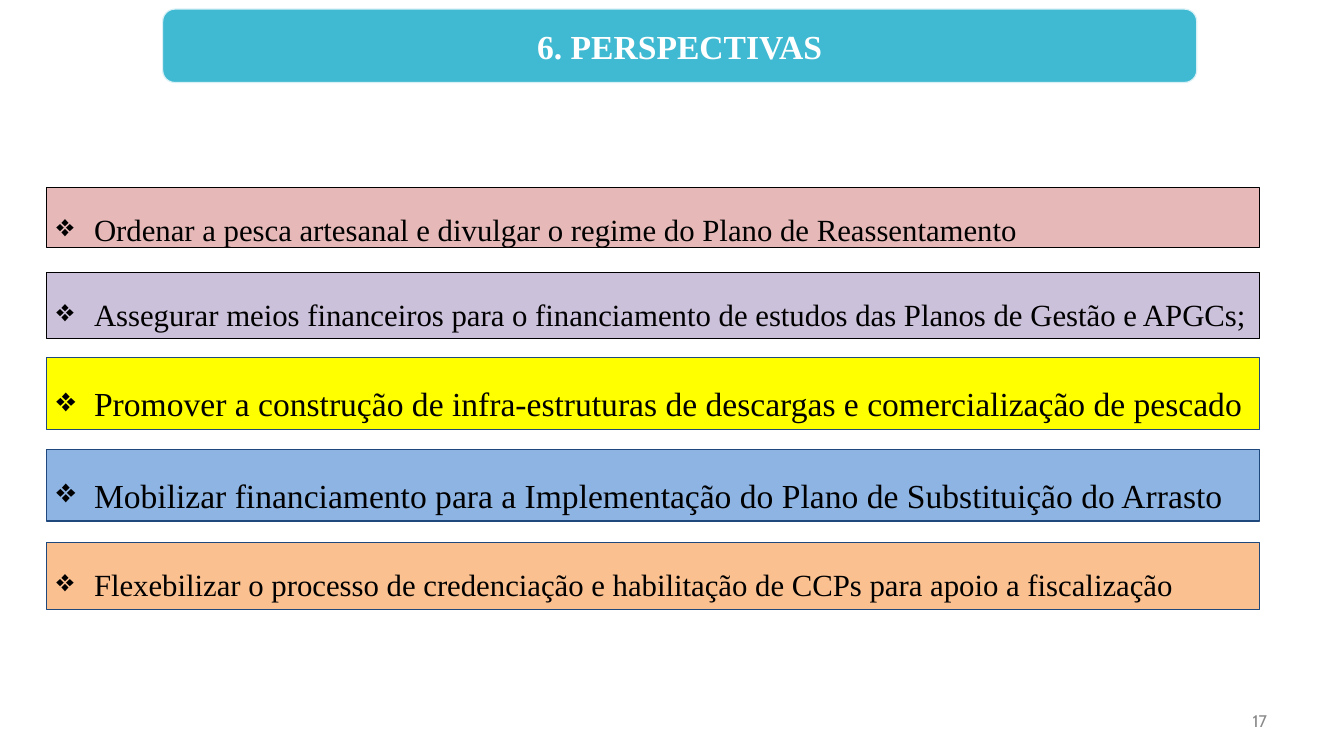
from lxml import etree
from pptx import Presentation
from pptx.dml.color import RGBColor
from pptx.enum.shapes import MSO_SHAPE
from pptx.enum.text import MSO_ANCHOR, PP_ALIGN
from pptx.oxml.ns import qn
from pptx.util import Cm, Pt

RECTANGLE, ROUNDED = MSO_SHAPE.RECTANGLE, MSO_SHAPE.ROUNDED_RECTANGLE
TOP, MIDDLE = MSO_ANCHOR.TOP, MSO_ANCHOR.MIDDLE
LEFT, CENTER, RIGHT, JUSTIFY = PP_ALIGN.LEFT, PP_ALIGN.CENTER, PP_ALIGN.RIGHT, PP_ALIGN.JUSTIFY

SERIF = "Times New Roman"
BLACK, NAVY, WHITE, GREY = "000000", "1F497D", "FFFFFF", "898989"
TITLE = "6. PERSPECTIVAS"
PAGE_NUMBER = "17"
BAR_LEFT, BAR_WIDTH = 1.17, 30.58
BULLET, BULLET_INDENT = "❖", 0.95

# text, top (cm), height (cm), fill, outline, text size, alignment
PERSPECTIVES = [
    ("Ordenar a pesca artesanal e divulgar o regime do Plano de Reassentamento",
     4.72, 1.52, "E6B9B8", BLACK, 22, JUSTIFY),
    ("Assegurar meios financeiros para o financiamento de estudos das Planos de Gestão e APGCs;",
     6.86, 1.68, "CCC1DA", BLACK, 22, JUSTIFY),
    ("Promover a construção de infra-estruturas de descargas e comercialização de pescado",
     9.02, 1.8, "FFFF00", NAVY, 24, LEFT),
    ("Mobilizar financiamento para a Implementação do Plano de Substituição do Arrasto",
     11.33, 1.8, "8EB4E3", NAVY, 24, LEFT),
    ("Flexebilizar o processo de credenciação e habilitação de CCPs para apoio a fiscalização",
     13.67, 1.68, "FAC090", NAVY, 22, LEFT),
]


def color(value):
    return RGBColor.from_string(value)


def add_box(page, kind, left, top, width, height, fill, outline, weight=0.75):
    box = page.shapes.add_shape(kind, Cm(left), Cm(top), Cm(width), Cm(height))
    box.shadow.inherit = False
    box.fill.solid()
    box.fill.fore_color.rgb = color(fill)
    box.line.color.rgb = color(outline)
    box.line.width = Pt(weight)
    return box


def write(box, text, size, font=SERIF, ink=BLACK, bold=False, align=LEFT,
          anchor=MIDDLE, spacing=None):
    frame = box.text_frame
    frame.word_wrap = True
    frame.vertical_anchor = anchor
    para = frame.paragraphs[0]
    para.alignment = align
    para.line_spacing = spacing
    span = para.add_run()
    span.text = text
    span.font.size = Pt(size)
    span.font.name = font
    span.font.bold = bold
    span.font.color.rgb = color(ink)
    return para


def add_bullet(para):
    properties = para._p.get_or_add_pPr()
    properties.set("marL", str(Cm(BULLET_INDENT)))
    properties.set("indent", str(-Cm(BULLET_INDENT)))
    etree.SubElement(properties, qn("a:buChar")).set("char", BULLET)


def main():
    deck = Presentation()
    deck.slide_width, deck.slide_height = Cm(33.87), Cm(19.05)
    page = deck.slides.add_slide(deck.slide_layouts[6])

    number = page.shapes.add_textbox(Cm(24.28), Cm(17.65), Cm(7.9), Cm(1.02))
    write(number, PAGE_NUMBER, 12, font="Cabin", ink=GREY, align=RIGHT)

    banner = add_box(page, ROUNDED, 4.1, 0.23, 26.06, 1.85, "40BAD2", "D9F1F6", 0.85)
    write(banner, TITLE, 24, ink=WHITE, bold=True, align=CENTER)

    for text, top, height, fill, outline, size, align in PERSPECTIVES:
        bar = add_box(page, RECTANGLE, BAR_LEFT, top, BAR_WIDTH, height, fill, outline)
        add_bullet(write(bar, text, size, align=align, anchor=TOP, spacing=1.5))

    deck.save("out.pptx")


if __name__ == "__main__":
    main()
